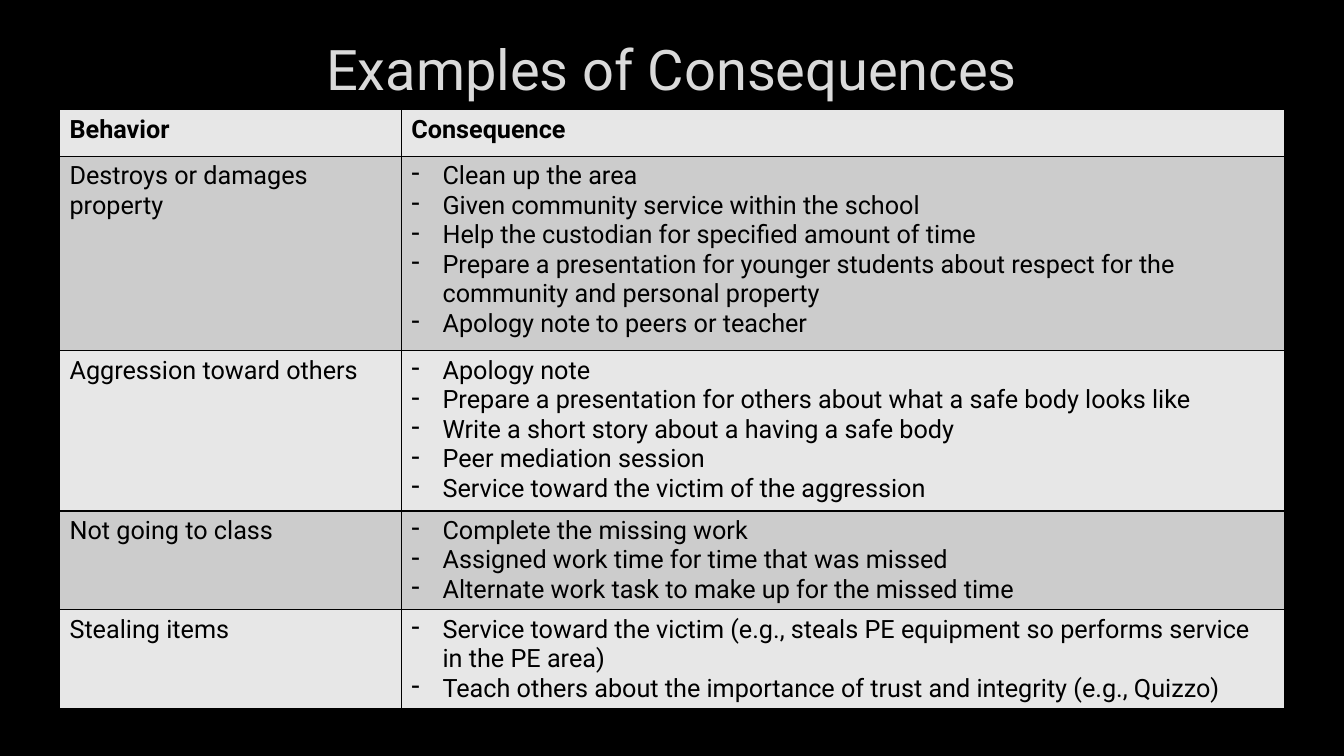
import pptx
import pptx.dml.color
import pptx.enum.text
import pptx.oxml
import pptx.oxml.ns
import pptx.util
from pptx.util import Inches

FONT = "Roboto"
COLORS = {
    "background": "000000",
    "title": "DADADA",
    "text": "000000",
    "border": "000000",
    "light": "E7E7E7",
    "dark": "CCCCCC",
}
HEADINGS = ("Behavior", "Consequence")
CONSEQUENCES = {
    "Destroys or damages property": [
        "Clean up the area",
        "Given community service within the school",
        "Help the custodian for specified amount of time",
        "Prepare a presentation for younger students about respect for the "
        "community and personal property",
        "Apology note to peers or teacher",
    ],
    "Aggression toward others": [
        "Apology note",
        "Prepare a presentation for others about what a safe body looks like",
        "Write a short story about a having a safe body",
        "Peer mediation session",
        "Service toward the victim of the aggression",
    ],
    "Not going to class": [
        "Complete the missing work",
        "Assigned work time for time that was missed",
        "Alternate work task to make up for the missed time",
    ],
    "Stealing items": [
        "Service toward the victim (e.g., steals PE equipment so performs "
        "service in the PE area)",
        "Teach others about the importance of trust and integrity (e.g., Quizzo)",
    ],
}
COLUMN_WIDTHS = (3.39, 8.76)
ROW_HEIGHTS = (0.46, 1.93, 1.59, 0.98, 0.98)


def rgb(name):
    return pptx.dml.color.RGBColor.from_string(COLORS[name])


def add_run(paragraph, text, size, color, bold=False):
    run = paragraph.add_run()
    run.text = text
    run.font.name = FONT
    run.font.size = pptx.util.Pt(size)
    run.font.bold = bold
    run.font.color.rgb = rgb(color)


def set_dash_bullet(paragraph):
    properties = paragraph._p.get_or_add_pPr()
    properties.set("marL", str(Inches(0.31)))
    properties.set("indent", str(-Inches(0.31)))
    bullet = pptx.oxml.parse_xml(
        f'<a:buChar {pptx.oxml.ns.nsdecls("a")} char="-"/>')
    properties.append(bullet)


def set_borders(cell):
    properties = cell._tc.get_or_add_tcPr()
    for side in ("lnL", "lnR", "lnT", "lnB"):
        properties.append(pptx.oxml.parse_xml(
            f'<a:{side} {pptx.oxml.ns.nsdecls("a")} w="{pptx.util.Pt(1)}">'
            f'<a:solidFill><a:srgbClr val="{COLORS["border"]}"/></a:solidFill>'
            f'</a:{side}>'))


def fill_cell(cell, lines, fill, bold=False, bulleted=False):
    set_borders(cell)
    cell.fill.solid()
    cell.fill.fore_color.rgb = rgb(fill)
    frame = cell.text_frame
    for index, line in enumerate(lines):
        paragraph = frame.add_paragraph() if index else frame.paragraphs[0]
        if bulleted:
            set_dash_bullet(paragraph)
        add_run(paragraph, line, 18, "text", bold)


def add_title(slide, text):
    title = slide.shapes.title
    title.left, title.top = Inches(1), Inches(0.15)
    title.width, title.height = Inches(11.32), Inches(1.06)
    title.text_frame.vertical_anchor = pptx.enum.text.MSO_ANCHOR.MIDDLE
    paragraph = title.text_frame.paragraphs[0]
    paragraph.alignment = pptx.enum.text.PP_ALIGN.CENTER
    add_run(paragraph, text, 40, "title")


def add_consequence_table(slide):
    table = slide.shapes.add_table(
        len(ROW_HEIGHTS), len(COLUMN_WIDTHS), Inches(0.59), Inches(1.09),
        Inches(sum(COLUMN_WIDTHS)), Inches(sum(ROW_HEIGHTS))).table
    for column, width in zip(table.columns, COLUMN_WIDTHS):
        column.width = Inches(width)
    for row, height in zip(table.rows, ROW_HEIGHTS):
        row.height = Inches(height)
    for index, heading in enumerate(HEADINGS):
        fill_cell(table.cell(0, index), [heading], "light", bold=True)
    for row, (behavior, items) in enumerate(CONSEQUENCES.items(), start=1):
        fill = "dark" if row % 2 else "light"
        fill_cell(table.cell(row, 0), [behavior], fill)
        fill_cell(table.cell(row, 1), items, fill, bulleted=True)


def main():
    presentation = pptx.Presentation()
    presentation.slide_width = Inches(13.33)
    presentation.slide_height = Inches(7.5)
    slide = presentation.slides.add_slide(presentation.slide_layouts[5])
    slide.background.fill.solid()
    slide.background.fill.fore_color.rgb = rgb("background")
    add_title(slide, "Examples of Consequences")
    add_consequence_table(slide)
    presentation.save("out.pptx")


if __name__ == "__main__":
    main()
